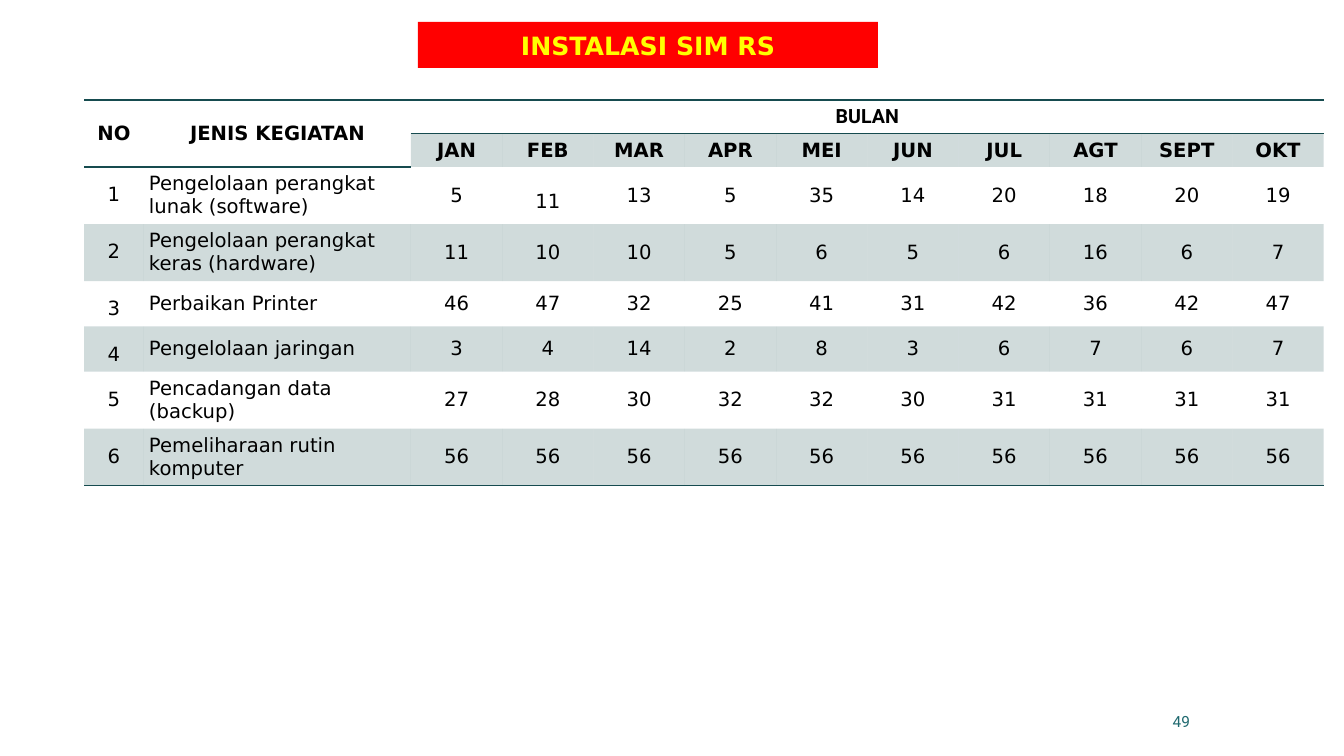
from lxml.etree import SubElement
from pptx import Presentation
from pptx.dml.color import RGBColor
from pptx.enum.text import MSO_ANCHOR, PP_ALIGN
from pptx.oxml.ns import qn
from pptx.util import Pt

EMU_PER_INCH = 914400
PX_PER_INCH = 100.8

BLACK = RGBColor(0x00, 0x00, 0x00)
RED = RGBColor(0xFF, 0x00, 0x00)
YELLOW = RGBColor(0xFF, 0xFF, 0x00)
TEAL = RGBColor(0x16, 0x4B, 0x4F)
NUMBER_TEAL = RGBColor(0x1F, 0x69, 0x6F)

BODY_FONT = "DejaVu Sans"
ACCENT_FONT = "Roboto"
PLAIN_TABLE_STYLE = "{2D5ABB26-0587-4C30-8999-92F81FD0307C}"

MONTHS = ["JAN", "FEB", "MAR", "APR", "MEI", "JUN", "JUL", "AGT", "SEPT", "OKT"]
ACTIVITIES = [
    ("Pengelolaan perangkat lunak (software)", [5, 11, 13, 5, 35, 14, 20, 18, 20, 19]),
    ("Pengelolaan perangkat keras (hardware)", [11, 10, 10, 5, 6, 5, 6, 16, 6, 7]),
    ("Perbaikan Printer", [46, 47, 32, 25, 41, 31, 42, 36, 42, 47]),
    ("Pengelolaan jaringan", [3, 4, 14, 2, 8, 3, 6, 7, 6, 7]),
    ("Pencadangan data (backup)", [27, 28, 30, 32, 32, 30, 31, 31, 31, 31]),
    ("Pemeliharaan rutin komputer", [56] * 10),
]
ROW_HEIGHTS = [33, 33, 56, 57, 44, 45, 56, 56]
NUMBER_WIDTH, ACTIVITY_WIDTH, MONTHS_WIDTH = 60, 267, 913
HEADER_ROWS = 2
LABEL_COLUMNS = 2


def px(length):
    return round(length * EMU_PER_INCH / PX_PER_INCH)


def place(shape, left, top, width, height):
    shape.left, shape.top = px(left), px(top)
    shape.width, shape.height = px(width), px(height)


def style_text(paragraph, size, color, name=BODY_FONT, bold=False, align=PP_ALIGN.CENTER):
    paragraph.alignment = align
    font = paragraph.font
    font.name, font.size, font.bold = name, Pt(size), bold
    font.color.rgb = color


def add_banner(slide, text):
    """Turn the title placeholder into a rounded red banner."""
    banner = slide.shapes.title
    place(banner, 418, 22, 460, 46)
    geometry = SubElement(banner.element.spPr, qn("a:prstGeom"), prst="roundRect")
    SubElement(geometry, qn("a:avLst"))
    banner.fill.solid()
    banner.fill.fore_color.rgb = RED
    banner.text_frame.text = text
    banner.text_frame.vertical_anchor = MSO_ANCHOR.MIDDLE
    style_text(banner.text_frame.paragraphs[0], 18, YELLOW, bold=True)


def add_page_number(slide, text):
    box = slide.shapes.add_textbox(px(887), px(701), px(313), px(40))
    frame = box.text_frame
    frame.word_wrap = True
    frame.vertical_anchor = MSO_ANCHOR.MIDDLE
    frame.text = text
    style_text(frame.paragraphs[0], 11, NUMBER_TEAL, ACCENT_FONT, align=PP_ALIGN.RIGHT)


def add_border(cell, side):
    properties = cell._tc.get_or_add_tcPr()
    line = SubElement(properties, qn(f"a:ln{side}"), w=str(Pt(1)))
    fill = SubElement(line, qn("a:solidFill"))
    SubElement(fill, qn("a:srgbClr"), val=str(TEAL))


def tint(cell):
    """Fill the cell with teal at 20 % opacity."""
    cell.fill.solid()
    cell.fill.fore_color.rgb = TEAL
    color = cell._tc.tcPr.find(f"{qn('a:solidFill')}/{qn('a:srgbClr')}")
    SubElement(color, qn("a:alpha"), val="20000")


def format_cell(cell, row, column):
    is_header = row < HEADER_ROWS
    is_label = column < LABEL_COLUMNS
    is_number = column == 0 and not is_header
    cell.margin_left = cell.margin_right = px(5)
    cell.margin_top = cell.margin_bottom = px(5)
    cell.vertical_anchor = MSO_ANCHOR.TOP if is_number else MSO_ANCHOR.MIDDLE

    if row == 0:
        add_border(cell, "T")
    if row in (0, len(ROW_HEIGHTS) - 1) or (row == 1 and is_label):
        add_border(cell, "B")
    if row % 2 == 1 and not (is_header and is_label):
        tint(cell)
    else:
        cell.fill.background()

    paragraph = cell.text_frame.paragraphs[0]
    is_february_software = row == HEADER_ROWS and column == LABEL_COLUMNS + 1
    if is_number or is_february_software:
        paragraph.line_spacing = 1.5
    name = ACCENT_FONT if row == 0 and not is_label else BODY_FONT
    align = PP_ALIGN.LEFT if column == 1 and not is_header else PP_ALIGN.CENTER
    style_text(paragraph, 14, BLACK, name, is_header, align)


def add_activity_table(slide):
    rows = [["NO", "JENIS KEGIATAN", "BULAN"], ["", "", *MONTHS]]
    rows += [[number, activity, *counts]
             for number, (activity, counts) in enumerate(ACTIVITIES, start=1)]
    column_count = LABEL_COLUMNS + len(MONTHS)
    frame = slide.shapes.add_table(
        len(rows), column_count, px(84), px(100),
        px(NUMBER_WIDTH + ACTIVITY_WIDTH + MONTHS_WIDTH), px(sum(ROW_HEIGHTS)))
    table = frame.table
    table.first_row = table.horz_banding = False
    frame.element.find(f".//{qn('a:tableStyleId')}").text = PLAIN_TABLE_STYLE

    month_width = MONTHS_WIDTH / len(MONTHS)
    widths = [NUMBER_WIDTH, ACTIVITY_WIDTH] + [month_width] * len(MONTHS)
    for column, width in zip(table.columns, widths):
        column.width = px(width)
    for row, height in zip(table.rows, ROW_HEIGHTS):
        row.height = px(height)

    for row, values in enumerate(rows):
        for column, value in enumerate(values):
            table.cell(row, column).text = str(value)
        for column in range(column_count):
            format_cell(table.cell(row, column), row, column)

    for column in range(LABEL_COLUMNS):
        table.cell(0, column).merge(table.cell(1, column))
    table.cell(0, LABEL_COLUMNS).merge(table.cell(0, column_count - 1))


def main():
    presentation = Presentation()
    presentation.slide_width, presentation.slide_height = px(1344), px(756)
    slide = presentation.slides.add_slide(presentation.slide_layouts[5])
    add_page_number(slide, "49")
    add_activity_table(slide)
    add_banner(slide, "INSTALASI SIM RS")
    presentation.save("out.pptx")


if __name__ == "__main__":
    main()
